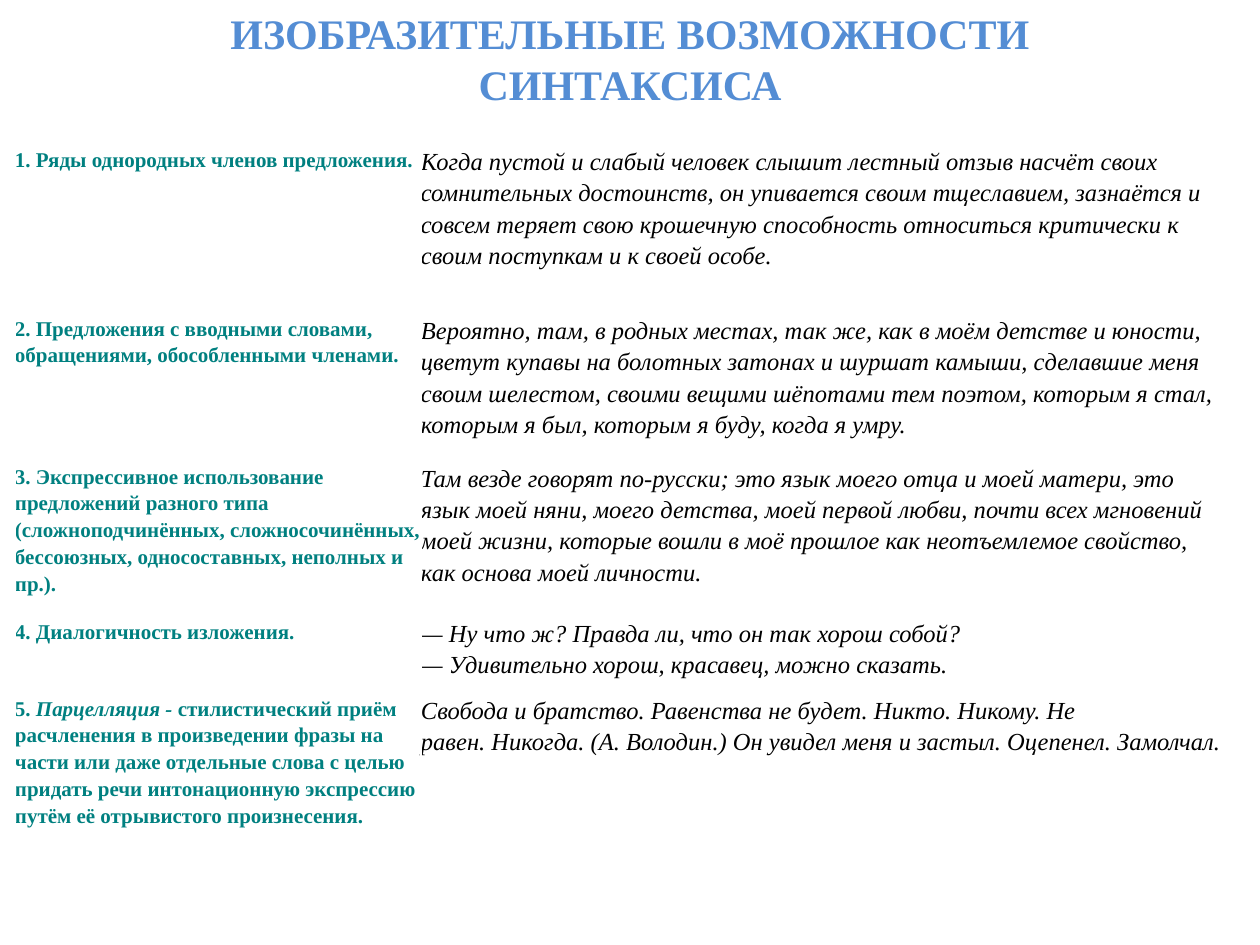
from dataclasses import dataclass

from pptx import Presentation
from pptx.dml.color import RGBColor
from pptx.enum.text import MSO_ANCHOR, MSO_AUTO_SIZE, PP_ALIGN
from pptx.util import Emu, Pt


@dataclass(frozen=True)
class Theme:
    """Hold the colours, type sizes and font of the slide."""
    font: str = "Times New Roman"
    blue: str = "548DD4"
    teal: str = "008080"
    black: str = "000000"
    head: int = 24
    term: int = 12
    quote: int = 14
    lead: float = 1.15


@dataclass(frozen=True)
class Row:
    """Describe one device: its name, its sample lines and its height."""
    term: str
    quote: tuple[str, ...]
    high: int


THEME = Theme()
SCALE = 914400 / 126
COLS = (406, 805)
MARK = "Парцелляция - "
TITLE = "ИЗОБРАЗИТЕЛЬНЫЕ ВОЗМОЖНОСТИ СИНТАКСИСА"
ROWS = (
    Row("1. Ряды однородных членов предложения.",
        ("Когда пустой и слабый человек слышит лестный отзыв насчёт своих "
         "сомнительных достоинств, он упивается своим тщеславием, зазнаётся и "
         "совсем теряет свою крошечную способность относиться критически к "
         "своим поступкам и к своей особе.",), 169),
    Row("2. Предложения с вводными словами, обращениями, обособленными членами.",
        ("Вероятно, там, в родных местах, так же, как в моём детстве и юности, "
         "цветут купавы на болотных затонах и шуршат камыши, сделавшие меня "
         "своим шелестом, своими вещими шёпотами тем поэтом, которым я стал, "
         "которым я был, которым я буду, когда я умру.",), 148),
    Row("3. Экспрессивное использование предложений разного типа "
        "(сложноподчинённых, сложносочинённых, бессоюзных, односоставных, "
        "неполных и пр.).",
        ("Там везде говорят по-русски; это язык моего отца и моей матери, это "
         "язык моей няни, моего детства, моей первой любви, почти всех мгновений "
         "моей жизни, которые вошли в моё прошлое как неотъемлемое свойство, "
         "как основа моей личности.",), 155),
    Row("4. Диалогичность изложения.",
        ("— Ну что ж? Правда ли, что он так хорош собой?",
         "— Удивительно хорош, красавец, можно сказать."), 77),
    Row("5. Парцелляция - стилистический приём расчленения в произведении фразы "
        "на части или даже отдельные слова с целью придать речи интонационную "
        "экспрессию путём её отрывистого произнесения.",
        ("Свобода и братство. Равенства не будет. Никто. Никому. Не",
         "равен. Никогда. (А. Володин.) Он увидел меня и застыл. Оцепенел. "
         "Замолчал."), 155),
)


def px(num: int) -> Emu:
    """Turn pixels into EMU."""
    return Emu(round(num * SCALE))


def style(para, size: int, hue: str, bold: bool) -> None:
    """Set the font of a whole paragraph."""
    font = para.font
    font.name, font.size, font.bold = THEME.font, Pt(size), bold
    font.color.rgb = RGBColor.from_string(hue)


def head(slide) -> None:
    """Place and format the title."""
    box = slide.shapes.title
    box.left, box.top, box.width, box.height = map(px, (63, 0, 1134, 116))
    frame = box.text_frame
    frame.text = TITLE
    frame.auto_size = MSO_AUTO_SIZE.NONE
    frame.vertical_anchor = MSO_ANCHOR.MIDDLE
    para = frame.paragraphs[0]
    para.alignment = PP_ALIGN.CENTER
    style(para, THEME.head, THEME.blue, True)


def clear(cell) -> None:
    """Take away the fill and margins of a cell."""
    cell.fill.background()
    cell.margin_left = cell.margin_right = 0
    cell.margin_top = cell.margin_bottom = 0


def term(cell, text: str) -> None:
    """Write a device name, with its marked word in italics."""
    clear(cell)
    para = cell.text_frame.paragraphs[0]
    para.line_spacing = THEME.lead
    style(para, THEME.term, THEME.teal, True)
    for part in text.partition(MARK):
        if part:
            run = para.add_run()
            run.text = part
            run.font.italic = part == MARK


def quote(cell, lines: tuple[str, ...]) -> None:
    """Write the sample lines of a device."""
    clear(cell)
    cell.text_frame.text = "\n".join(lines)
    for para in cell.text_frame.paragraphs:
        para.line_spacing = THEME.lead
        style(para, THEME.quote, THEME.black, False)
        para.font.italic = True


def grid(slide) -> None:
    """Draw the table of devices and samples."""
    high = sum(row.high for row in ROWS)
    table = slide.shapes.add_table(
        len(ROWS), len(COLS), px(15), px(145), px(sum(COLS)), px(high)).table
    table.first_row = table.horz_banding = False
    for col, wide in zip(table.columns, COLS):
        col.width = px(wide)
    for num, row in enumerate(ROWS):
        table.rows[num].height = px(row.high)
        term(table.cell(num, 0), row.term)
        quote(table.cell(num, 1), row.quote)


def main() -> None:
    """Build and save the slide."""
    deck = Presentation()
    deck.slide_width, deck.slide_height = px(1260), px(945)
    slide = deck.slides.add_slide(deck.slide_layouts[5])
    head(slide)
    grid(slide)
    deck.save("out.pptx")


if __name__ == "__main__":
    main()
